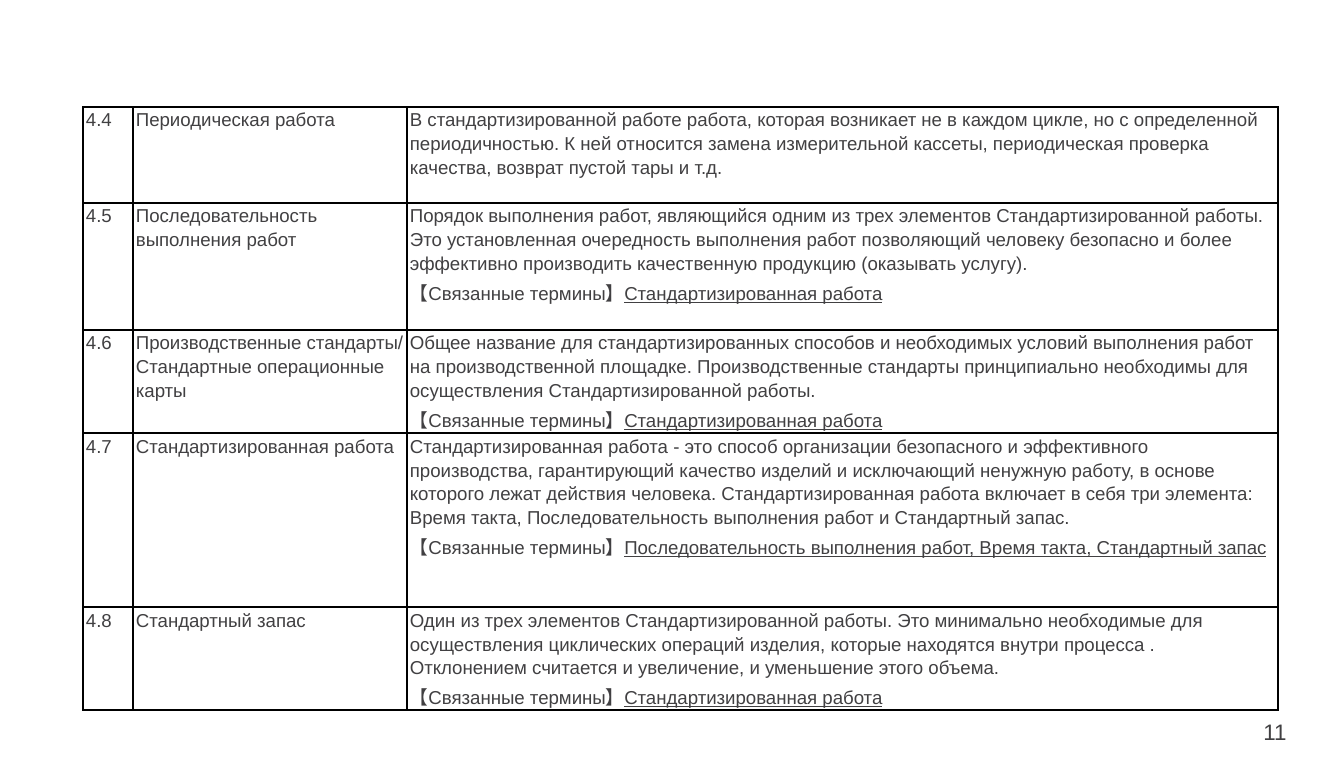
from lxml import etree
from pptx import Presentation
from pptx.dml.color import RGBColor
from pptx.enum.text import MSO_ANCHOR, PP_ALIGN
from pptx.oxml.ns import qn
from pptx.util import Pt

EMU_PER_PX = 914400 / 134.4
FONT = "Arial"
GREY = RGBColor(0x41, 0x40, 0x42)
BLACK = RGBColor(0, 0, 0)
CENTER = PP_ALIGN.CENTER
MIDDLE = MSO_ANCHOR.MIDDLE
BLANK_LAYOUT = 6

COLUMN_WIDTHS = (50, 274, 871)
ROW_HEIGHTS = (96, 127, 103, 174, 103)
RELATED_LABEL = "【Связанные термины】"
STANDARDIZED_WORK = "Стандартизированная работа"
TERMS = (
    (
        "4.4",
        "Периодическая работа",
        "В стандартизированной работе работа, которая возникает не в каждом цикле, "
        "но с определенной периодичностью. К ней относится замена измерительной "
        "кассеты, периодическая проверка качества, возврат пустой тары и т.д.",
        "",
    ),
    (
        "4.5",
        "Последовательность выполнения работ",
        "Порядок выполнения работ, являющийся одним из трех элементов "
        "Стандартизированной работы. Это установленная очередность выполнения работ "
        "позволяющий человеку безопасно и более эффективно производить качественную "
        "продукцию (оказывать услугу).",
        STANDARDIZED_WORK,
    ),
    (
        "4.6",
        "Производственные стандарты/ Стандартные операционные карты",
        "Общее название для стандартизированных способов и необходимых условий "
        "выполнения работ на производственной площадке. Производственные стандарты "
        "принципиально необходимы для осуществления Стандартизированной работы.",
        STANDARDIZED_WORK,
    ),
    (
        "4.7",
        STANDARDIZED_WORK,
        "Стандартизированная работа - это способ организации безопасного и "
        "эффективного производства, гарантирующий качество изделий и исключающий "
        "ненужную работу, в основе которого лежат действия человека. "
        "Стандартизированная работа включает в себя три элемента: Время такта, "
        "Последовательность выполнения работ и Стандартный запас.",
        "Последовательность выполнения работ, Время такта, Стандартный запас",
    ),
    (
        "4.8",
        "Стандартный запас",
        "Один из трех элементов Стандартизированной работы. Это минимально "
        "необходимые для осуществления циклических операций изделия, которые "
        "находятся внутри процесса . Отклонением считается и увеличение, и "
        "уменьшение этого объема.",
        STANDARDIZED_WORK,
    ),
)


def px(length):
    return round(length * EMU_PER_PX)


def format_font(font, size):
    font.name = FONT
    font.size = Pt(size)
    font.color.rgb = GREY


def draw_borders(cell):
    properties = cell._tc.get_or_add_tcPr()
    for side in ("a:lnL", "a:lnR", "a:lnT", "a:lnB"):
        line = etree.SubElement(properties, qn(side), w=str(Pt(1)))
        fill = etree.SubElement(line, qn("a:solidFill"))
        etree.SubElement(fill, qn("a:srgbClr"), val=str(BLACK))


def fill_cell(cell, text, related=""):
    draw_borders(cell)
    cell.fill.background()
    cell.margin_left = cell.margin_right = px(3)
    cell.margin_top = cell.margin_bottom = 0
    frame = cell.text_frame
    frame.text = text
    if related:
        para = frame.add_paragraph()
        para.text = RELATED_LABEL
        span = para.add_run()
        span.text = related
        span.font.underline = True
    for para in frame.paragraphs:
        para.line_spacing = 1.15
        for span in para.runs:
            format_font(span.font, 10)


def add_glossary(page):
    table = page.shapes.add_table(
        len(TERMS), len(COLUMN_WIDTHS), px(83), px(107),
        px(sum(COLUMN_WIDTHS)), px(sum(ROW_HEIGHTS)),
    ).table
    table.first_row = table.horz_banding = False
    for column, width in zip(table.columns, COLUMN_WIDTHS):
        column.width = px(width)
    for row, height, term in zip(table.rows, ROW_HEIGHTS, TERMS):
        row.height = px(height)
        number, name, definition, related = term
        fill_cell(row.cells[0], number)
        fill_cell(row.cells[1], name)
        fill_cell(row.cells[2], definition, related)


def add_page_number(page, number):
    box = page.shapes.add_textbox(px(1222), px(712), px(106), px(40))
    frame = box.text_frame
    frame.word_wrap = True
    frame.vertical_anchor = MIDDLE
    frame.margin_left = frame.margin_right = px(9)
    frame.margin_top = frame.margin_bottom = px(5)
    frame.text = number
    para = frame.paragraphs[0]
    para.alignment = CENTER
    format_font(para.runs[0].font, 12)


def main():
    deck = Presentation()
    deck.slide_width = px(1344)
    deck.slide_height = px(757)
    page = deck.slides.add_slide(deck.slide_layouts[BLANK_LAYOUT])
    add_page_number(page, "11")
    add_glossary(page)
    deck.save("out.pptx")


if __name__ == "__main__":
    main()
